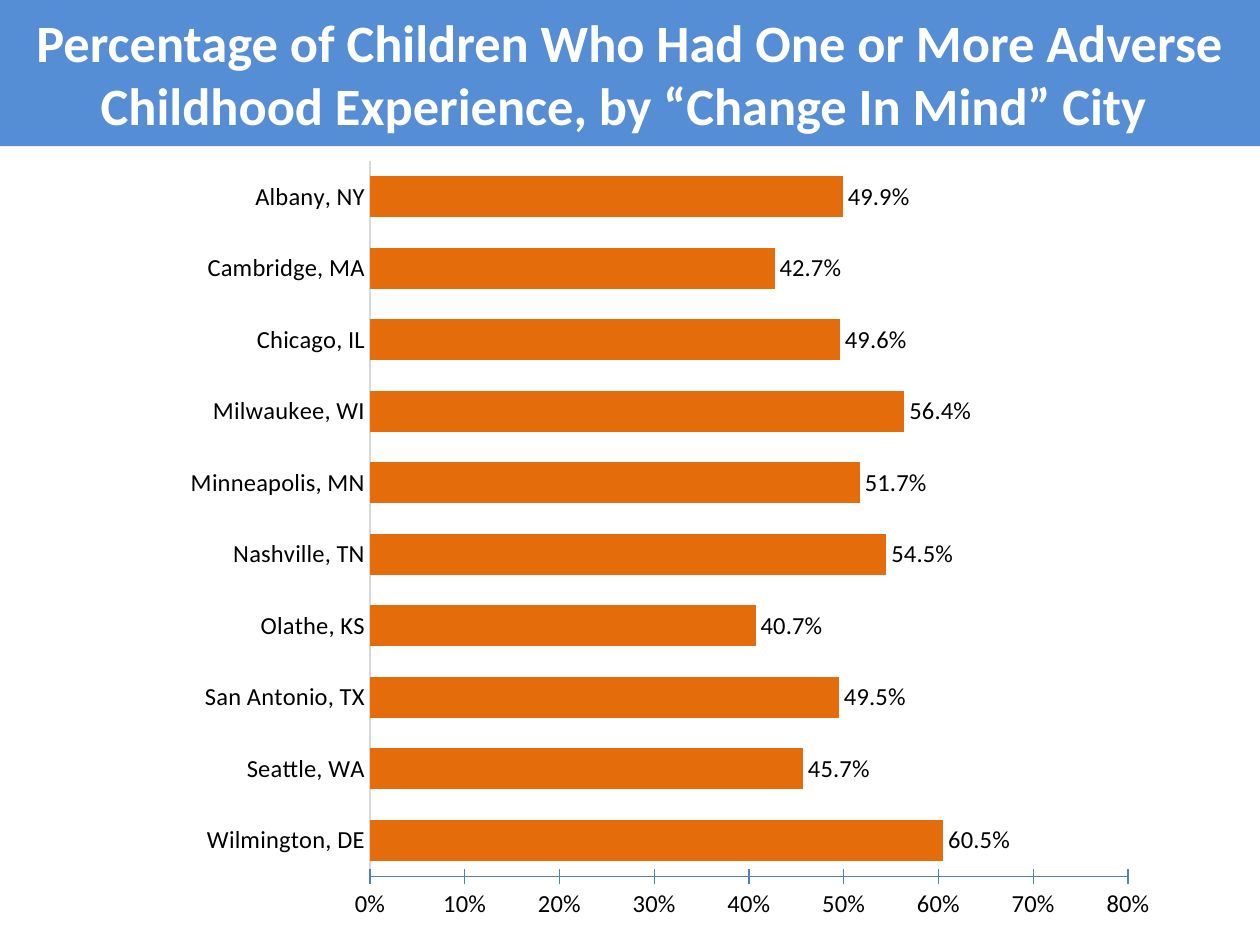
from dataclasses import dataclass

from pptx import Presentation
from pptx.chart.data import CategoryChartData
from pptx.dml.color import RGBColor
from pptx.enum.chart import XL_CHART_TYPE, XL_LABEL_POSITION, XL_TICK_MARK
from pptx.enum.shapes import MSO_SHAPE
from pptx.enum.text import MSO_ANCHOR, PP_ALIGN
from pptx.oxml import parse_xml
from pptx.oxml.ns import nsdecls
from pptx.util import Inches, Pt

BAR = XL_CHART_TYPE.BAR_CLUSTERED
OUTSIDE_END = XL_LABEL_POSITION.OUTSIDE_END
TICK_NONE, TICK_CROSS = XL_TICK_MARK.NONE, XL_TICK_MARK.CROSS
RECTANGLE = MSO_SHAPE.RECTANGLE
MIDDLE, CENTER = MSO_ANCHOR.MIDDLE, PP_ALIGN.CENTER
BLANK_LAYOUT = 6

TITLE = ("Percentage of Children Who Had One or More Adverse "
         "Childhood Experience, by “Change In Mind” City ")
CITY_RATES = {
    "Albany, NY": 0.499,
    "Cambridge, MA": 0.427,
    "Chicago, IL": 0.496,
    "Milwaukee, WI": 0.564,
    "Minneapolis, MN": 0.517,
    "Nashville, TN": 0.545,
    "Olathe, KS": 0.407,
    "San Antonio, TX": 0.495,
    "Seattle, WA": 0.457,
    "Wilmington, DE": 0.605,
}
PLOT_AREA = {"x": 0.19, "y": 0.02, "w": 0.69, "h": 0.9}


@dataclass(frozen=True)
class Theme:
    font: str = "Calibri"
    banner: RGBColor = RGBColor(0x55, 0x8E, 0xD5)
    banner_text: RGBColor = RGBColor(0xFF, 0xFF, 0xFF)
    bar: RGBColor = RGBColor(0xE4, 0x6C, 0x0A)
    text: RGBColor = RGBColor(0, 0, 0)
    category_line: RGBColor = RGBColor(0xD9, 0xD9, 0xD9)
    value_line: RGBColor = RGBColor(0x4F, 0x81, 0xBD)
    title_size: Pt = Pt(30)
    chart_size: Pt = Pt(14)
    line_width: Pt = Pt(0.75)


def set_format(target, values):
    for name, value in values.items():
        setattr(target, name, value)


class SlideBuilder:
    def __init__(self, slide, theme):
        self.slide = slide
        self.theme = theme

    def banner(self, text, left, top, width, height):
        box = self.slide.shapes.add_shape(
            RECTANGLE, Inches(left), Inches(top), Inches(width), Inches(height))
        box.shadow.inherit = False
        box.fill.solid()
        box.fill.fore_color.rgb = self.theme.banner
        box.line.fill.background()
        set_format(box.text_frame, {"word_wrap": True, "vertical_anchor": MIDDLE})
        para = box.text_frame.paragraphs[0]
        para.alignment = CENTER
        span = para.add_run()
        span.text = text
        set_format(span.font, {"name": self.theme.font, "bold": True,
                               "size": self.theme.title_size})
        span.font.color.rgb = self.theme.banner_text

    def bar_chart(self, rates, left, top, width, height):
        # Horizontal bars run from the bottom up
        data = CategoryChartData(number_format="0.0%")
        data.categories = list(reversed(rates))
        data.add_series("Series 1", list(reversed(rates.values())))
        chart = self.slide.shapes.add_chart(
            BAR, Inches(left), Inches(top), Inches(width), Inches(height), data).chart
        set_format(chart, {"has_legend": False, "has_title": False})
        self.chart_font(chart.font)

        # Bars and their labels
        plot = chart.plots[0]
        set_format(plot, {"gap_width": 75, "vary_by_categories": False,
                          "has_data_labels": True})
        fill = plot.series[0].format.fill
        fill.solid()
        fill.fore_color.rgb = self.theme.bar
        set_format(plot.data_labels, {
            "show_value": True, "number_format": "0.0%",
            "number_format_is_linked": False, "position": OUTSIDE_END})
        self.chart_font(plot.data_labels.font)

        # Axes
        self.axis(chart.category_axis, self.theme.category_line, TICK_NONE)
        self.axis(chart.value_axis, self.theme.value_line, TICK_CROSS,
                  {"minimum_scale": 0, "maximum_scale": 0.8, "major_unit": 0.1})
        set_format(chart.value_axis.tick_labels, {
            "number_format": "0%", "number_format_is_linked": False})
        self.place_plot(chart)

    def chart_font(self, font):
        set_format(font, {"name": self.theme.font, "size": self.theme.chart_size})
        font.color.rgb = self.theme.text

    def axis(self, axis, color, tick, scale=None):
        set_format(axis, {"has_major_gridlines": False, "major_tick_mark": tick,
                          "minor_tick_mark": TICK_NONE, **(scale or {})})
        axis.format.line.color.rgb = color
        axis.format.line.width = self.theme.line_width
        self.chart_font(axis.tick_labels.font)

    def place_plot(self, chart):
        modes = "".join(f'<c:{side}Mode val="edge"/>' for side in "xy")
        sizes = "".join(f'<c:{side} val="{size}"/>' for side, size in PLOT_AREA.items())
        layout = parse_xml(
            f'<c:layout {nsdecls("c")}><c:manualLayout><c:layoutTarget val="inner"/>'
            f"{modes}{sizes}</c:manualLayout></c:layout>")
        area = chart.element.xpath(".//c:plotArea")[0]
        for old_layout in area.xpath("./c:layout"):
            area.remove(old_layout)
        area.insert(0, layout)


def main():
    deck = Presentation()
    set_format(deck, {"slide_width": Inches(10), "slide_height": Inches(7.5)})
    page = deck.slides.add_slide(deck.slide_layouts[BLANK_LAYOUT])
    builder = SlideBuilder(page, Theme())
    builder.bar_chart(CITY_RATES, 1.28, 1.15, 8.72, 6.31)
    builder.banner(TITLE, 0, 0, 10, 1.16)
    deck.save("out.pptx")


if __name__ == "__main__":
    main()
